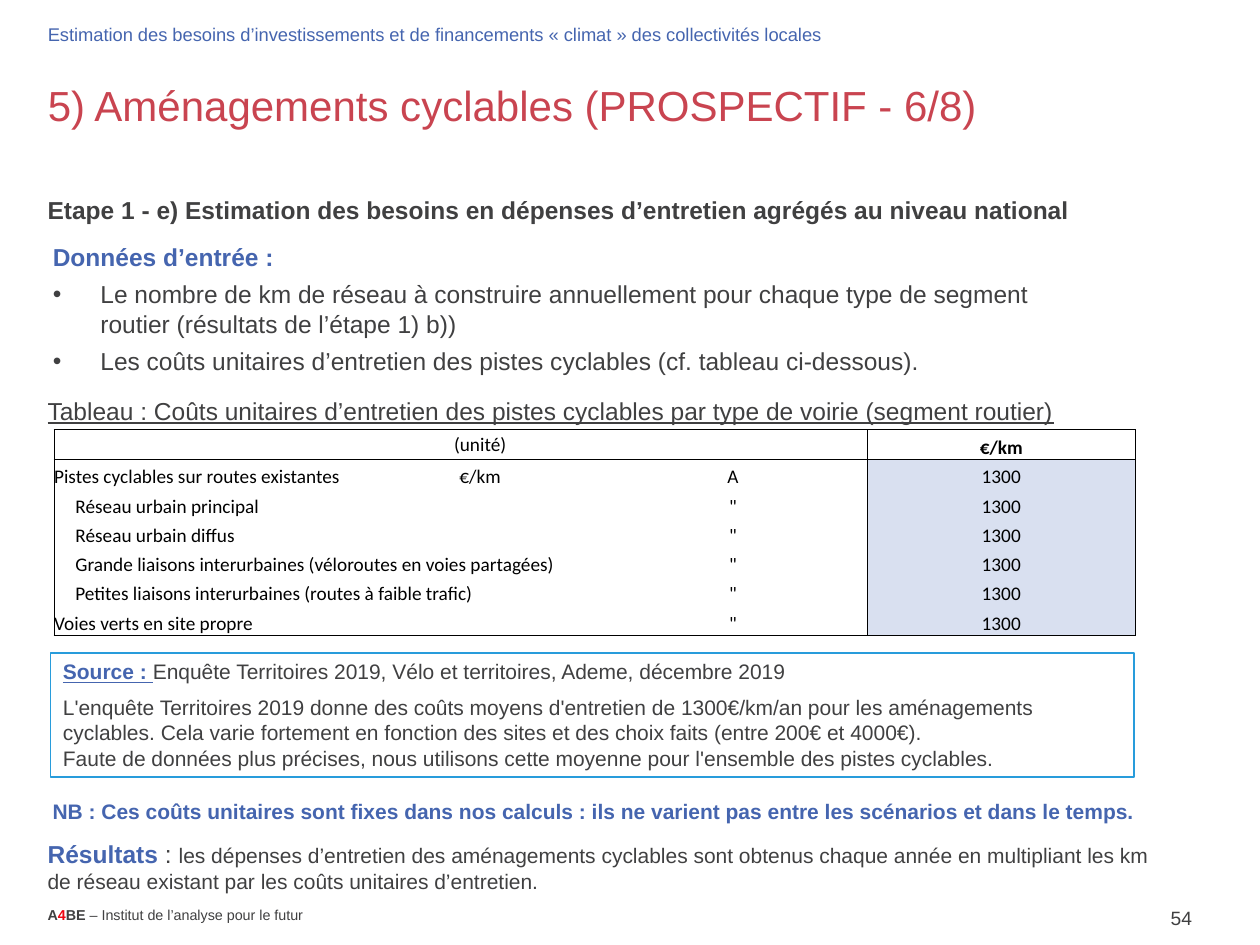
from lxml import etree
from pptx import Presentation
from pptx.dml.color import RGBColor
from pptx.enum.shapes import MSO_SHAPE
from pptx.enum.text import MSO_ANCHOR, PP_ALIGN
from pptx.oxml.ns import qn
from pptx.util import Cm, Pt

RECT = MSO_SHAPE.RECTANGLE
TOP, MIDDLE, BOTTOM = MSO_ANCHOR.TOP, MSO_ANCHOR.MIDDLE, MSO_ANCHOR.BOTTOM
LEFT, CENTER, RIGHT = PP_ALIGN.LEFT, PP_ALIGN.CENTER, PP_ALIGN.RIGHT
BLUE, GREY, RED, BLACK, WHITE = "4565AF", "404041", "C94450", "000000", "FFFFFF"
rgb = RGBColor.from_string


def add_run(para, text, size, color=GREY, **look):
    run = para.add_run()
    run.text = text
    look = {"name": "Arial", "size": Pt(size), "bold": False, **look}
    for key, value in look.items():
        setattr(run.font, key, value)
    run.font.color.rgb = rgb(color)


def place(shape, left, top, width, height, anchor=TOP):
    """Move the shape (in cm) and return its wrapped text frame."""
    box = {"left": left, "top": top, "width": width, "height": height}
    for key, value in box.items():
        setattr(shape, key, Cm(value))
    frame = shape.text_frame
    frame.word_wrap = True
    frame.vertical_anchor = anchor
    return frame


deck = Presentation()
deck.slide_width, deck.slide_height = Cm(25.4), Cm(19.05)
slide = deck.slides.add_slide(deck.slide_layouts[3])
shapes = slide.shapes
title, body, header = slide.placeholders

# Title and header line
frame = place(title, 0.71, 1.12, 24, 2, MIDDLE)
para = frame.paragraphs[0]
para.alignment = LEFT
add_run(para, "5) Aménagements cyclables (PROSPECTIF - 6/8)", 24, RED)

frame = place(header, 0.71, 0.33, 24, 0.81)
para = frame.paragraphs[0]
props = para._p.get_or_add_pPr()
props.set("marL", "0")
props.set("indent", "0")
etree.SubElement(props, qn("a:buNone"))
para.space_before = Pt(0)
add_run(para, "Estimation des besoins d’investissements et de financements « climat » des collectivités locales", 10.5, BLUE)

# Input data list
inputs = [
    "Données d’entrée :",
    "Le nombre de km de réseau à construire annuellement pour chaque type de segment routier (résultats de l’étape 1) b))",
    "Les coûts unitaires d’entretien des pistes cyclables (cf. tableau ci-dessous).",
]
frame = place(body, 0.81, 4.75, 21.2, 4.95)
for i, text in enumerate(inputs):
    para = frame.add_paragraph() if i else frame.paragraphs[0]
    props = para._p.get_or_add_pPr()
    indent = Cm(0.96) if i else 0
    props.set("marL", str(indent))
    props.set("indent", str(-indent))
    if i:
        etree.SubElement(props, qn("a:buFont"), typeface="Arial")
        etree.SubElement(props, qn("a:buChar"), char="•")
    else:
        etree.SubElement(props, qn("a:buNone"))
    para.space_before = Pt(4.5 if i else 0)
    add_run(para, text, 14, GREY if i else BLUE, bold=not i)

# Single-line notes: box, alignment, anchor, runs
strong = {"bold": True}
notes = [
    ((0.71, 3.81, 24.69, 0.86), LEFT, TOP,
     [("Etape 1 - e) Estimation des besoins en dépenses d’entretien agrégés au niveau national", 14, GREY, strong)]),
    ((0.71, 7.85, 22.99, 0.86), LEFT, TOP,
     [("Tableau : Coûts unitaires d’entretien des pistes cyclables par type de voirie (segment routier)", 14, GREY, {"underline": True})]),
    ((0.81, 15.98, 22.56, 0.76), LEFT, TOP,
     [("NB : Ces coûts unitaires sont fixes dans nos calculs : ils ne varient pas entre les scénarios et dans le temps.", 12, BLUE, strong)]),
    ((0.71, 18.14, 8.61, 0.61), LEFT, TOP,
     [("A", 8.2, GREY, strong), ("4", 8.2, "EE0612", strong), ("BE ", 8.2, GREY, strong),
      ("– Institut de l’analyse pour le futur", 8.2, GREY, {})]),
    ((22.3, 18.14, 1.98, 0.74), RIGHT, MIDDLE, [("54", 11, GREY, {})]),
]
for box, align, anchor, runs in notes:
    frame = place(shapes.add_textbox(0, 0, 0, 0), *box, anchor)
    para = frame.paragraphs[0]
    para.alignment = align
    for text, size, color, look in runs:
        add_run(para, text, size, color, **look)

# Source and result panels: box, outline, paragraphs
panels = [
    ((1.02, 13.16, 21.84, 2.51), "289CDB", [
        [("Source : ", 12, BLUE, {"bold": True, "underline": True}),
         ("Enquête Territoires 2019, Vélo et territoires, Ademe, décembre 2019", 12, GREY, {})],
        [("L'enquête Territoires 2019 donne des coûts moyens d'entretien de 1300€/km/an pour les aménagements cyclables. Cela varie fortement en fonction des sites et des choix faits (entre 200€ et 4000€).", 12, GREY, {})],
        [("Faute de données plus précises, nous utilisons cette moyenne pour l'ensemble des pistes cyclables.", 12, GREY, {})],
    ]),
    ((0.71, 16.79, 22.99, 1.37), None, [
        [("Résultats ", 14, BLUE, strong), (": ", 14, GREY, {}),
         ("les dépenses d’entretien des aménagements cyclables sont obtenus chaque année en multipliant les km de réseau existant par les coûts unitaires d’entretien.", 12, GREY, {})],
    ]),
]
for box, edge, paras in panels:
    panel = shapes.add_shape(RECT, 0, 0, 0, 0)
    panel.shadow.inherit = False
    panel.fill.solid()
    panel.fill.fore_color.rgb = rgb(WHITE)
    if edge:
        panel.line.color.rgb = rgb(edge)
        panel.line.width = Pt(0.85)
    else:
        panel.line.fill.background()
    frame = place(panel, *box)
    for i, runs in enumerate(paras):
        para = frame.add_paragraph() if i else frame.paragraphs[0]
        para.alignment = LEFT
        if edge and not i:
            para.space_after = Pt(6)
        for text, size, color, look in runs:
            add_run(para, text, size, color, **look)

# Unit cost table: label, columns spanned, unit, code, cost
rows = [
    ("", 1, "(unité)", "", "€/km"),
    ("Pistes cyclables sur routes existantes", 2, "€/km", "A", "1300"),
    ("Réseau urbain principal", 2, "", '"', "1300"),
    ("Réseau urbain diffus", 2, "", '"', "1300"),
    ("Grande liaisons interurbaines (véloroutes en voies partagées)", 3, "", '"', "1300"),
    ("Petites liaisons interurbaines (routes à faible trafic)", 3, "", '"', "1300"),
    ("Voies verts en site propre", 2, "", '"', "1300"),
]
last = len(rows) - 1
grid = shapes.add_table(len(rows), 5, Cm(1.09), Cm(8.66), Cm(21.8), Cm(4.15)).table
grid.first_row = grid.horz_banding = False
for col, width in zip(grid.columns, (3.1, 3.1, 4.78, 5.41, 5.41)):
    col.width = Cm(width)
for r, (label, span, *values) in enumerate(rows):
    grid.rows[r].height = Cm(0.59 if r else 0.61)
    for c, text in enumerate((label, "", *values)):
        cell = grid.cell(r, c)
        inset = 0.43 if c == 0 and 2 <= r < last else 0
        margins = {"left": inset, "right": 0, "top": 0, "bottom": 0}
        for side, value in margins.items():
            setattr(cell, "margin_" + side, Cm(value))
        cell.vertical_anchor = MIDDLE if r == 0 and c == 2 else BOTTOM
        para = cell.text_frame.paragraphs[0]
        para.alignment = CENTER if c else LEFT
        if text:
            add_run(para, text, 11, BLACK, name="Calibri", bold=r == 0 and c == 4)
        else:
            etree.SubElement(para._p, qn("a:endParaRPr"), sz="1100")
        edges = {"L": c in (0, 4), "R": c in (3, 4), "T": r in (0, 1), "B": r in (0, last)}
        for side, drawn in edges.items():
            line = etree.SubElement(cell._tc.get_or_add_tcPr(), qn("a:ln" + side), w=str(Pt(0.5)))
            if drawn:
                fill = etree.SubElement(line, qn("a:solidFill"))
                etree.SubElement(fill, qn("a:srgbClr"), val=BLACK)
            else:
                etree.SubElement(line, qn("a:noFill"))
        if r and c == 4:
            cell.fill.solid()
            cell.fill.fore_color.rgb = rgb("D9E0F0")
        else:
            cell.fill.background()
    if span > 1:
        grid.cell(r, 0).merge(grid.cell(r, span - 1))

deck.save("out.pptx")
